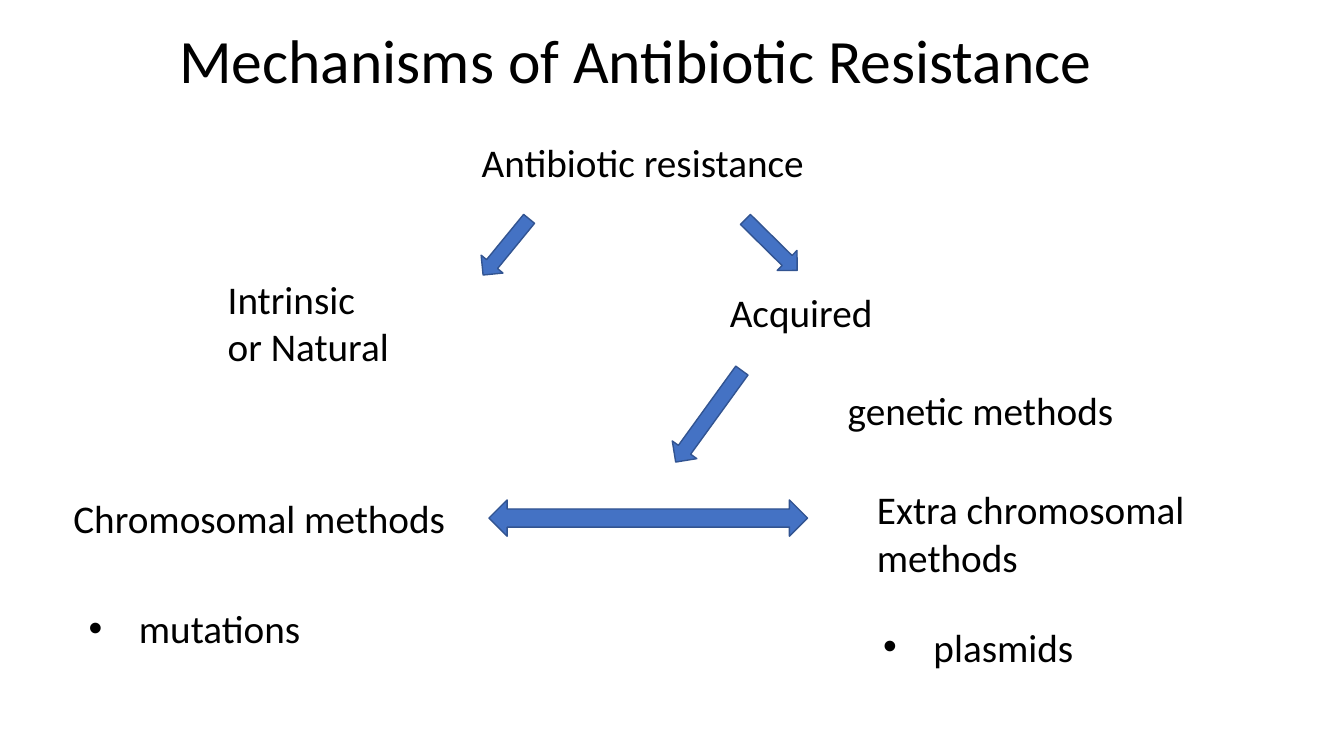
from lxml import etree
from pptx import Presentation
from pptx.dml.color import RGBColor
from pptx.enum.shapes import MSO_SHAPE
from pptx.enum.text import MSO_ANCHOR, MSO_AUTO_SIZE
from pptx.oxml.ns import qn
from pptx.util import Inches, Pt

COLORS = {"text": "000000", "arrow": "4472C4", "arrow_edge": "325491"}

prs = Presentation()
prs.slide_width, prs.slide_height = Inches(13.33), Inches(7.5)
slide = prs.slides.add_slide(prs.slide_layouts[6])


def add_label(lines, box, size, frame_format):
    frame = slide.shapes.add_textbox(*map(Inches, box)).text_frame
    for name, value in frame_format.items():
        setattr(frame, name, value)
    frame.text = "\n".join(lines)
    for paragraph in frame.paragraphs:
        font = paragraph.font
        for name, value in {"name": "Calibri", "size": Pt(size)}.items():
            setattr(font, name, value)
        font.color.rgb = RGBColor.from_string(COLORS["text"])
    return frame


# Title
title_format = {"word_wrap": True, "vertical_anchor": MSO_ANCHOR.MIDDLE}
title = add_label(["Mechanisms of Antibiotic Resistance"],
                  (1.68, -0.09, 11.5, 1.45), 44, title_format)
title.paragraphs[0].line_spacing = 0.9

# Arrows between the levels: preset, box, rotation
arrows = [
    (MSO_SHAPE.DOWN_ARROW, (4.88, 2.09, 0.28, 0.72), 39.3),
    (MSO_SHAPE.DOWN_ARROW, (7.51, 2.07, 0.28, 0.72), 314.6),
    (MSO_SHAPE.DOWN_ARROW, (6.88, 3.57, 0.3, 1.12), 35.9),
    (MSO_SHAPE.LEFT_RIGHT_ARROW, (4.85, 4.96, 3.16, 0.36), 0),
]
for preset, box, rotation in arrows:
    arrow = slide.shapes.add_shape(preset, *map(Inches, box))
    arrow.rotation = rotation
    arrow.shadow.inherit = False
    arrow.fill.solid()
    arrow.fill.fore_color.rgb = RGBColor.from_string(COLORS["arrow"])
    arrow.line.color.rgb = RGBColor.from_string(COLORS["arrow_edge"])
    arrow.line.width = Pt(1)

# Classification of resistance
label_format = {"word_wrap": False, "auto_size": MSO_AUTO_SIZE.SHAPE_TO_FIT_TEXT}
categories = [
    (["Antibiotic resistance"], (4.68, 1.32, 3.44, 0.57)),
    (["Intrinsic", "or Natural"], (2.16, 2.68, 1.91, 1.04)),
    (["Acquired"], (7.14, 2.81, 1.72, 0.57)),
    (["genetic methods"], (8.31, 3.78, 2.87, 0.57)),
    (["Chromosomal methods"], (0.63, 4.85, 3.93, 0.57)),
    (["Extra chromosomal", "methods"], (8.6, 4.77, 3.37, 1.04)),
]
for lines, box in categories:
    add_label(lines, box, 28, label_format)

# Bulleted examples
examples = [
    ("mutations", (0.78, 5.95, 2.33, 0.57)),
    ("plasmids", (8.66, 6.13, 2.11, 0.57)),
]
for example, box in examples:
    frame = add_label([example], box, 28, label_format)
    properties = frame.paragraphs[0]._p.get_or_add_pPr()
    properties.set("marL", str(Inches(0.5)))
    properties.set("indent", str(Inches(-0.5)))
    bullet_font = etree.Element(qn("a:buFont"), typeface="Arial")
    bullet = etree.Element(qn("a:buChar"), char="•")
    properties.insert(0, bullet_font)
    properties.insert(1, bullet)

prs.save("out.pptx")
